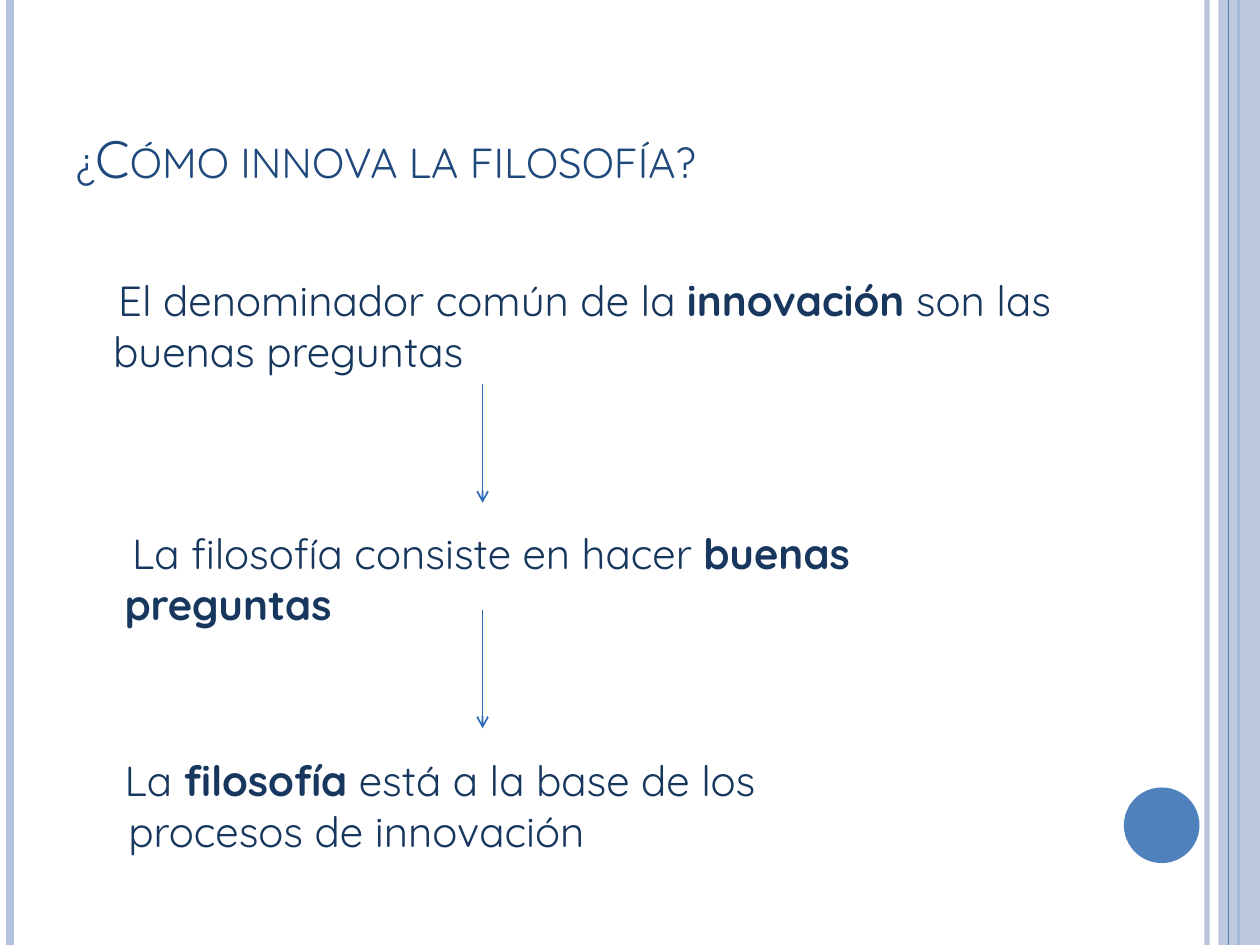
from dataclasses import dataclass

from lxml.etree import SubElement
from pptx import Presentation
from pptx.dml.color import RGBColor
from pptx.enum.shapes import MSO_CONNECTOR, MSO_SHAPE
from pptx.enum.text import MSO_ANCHOR, MSO_AUTO_SIZE, PP_ALIGN
from pptx.oxml.ns import qn
from pptx.util import Inches, Pt


@dataclass(frozen=True)
class Theme:
    font: str = "Quicksand"
    title: str = "1F497D"
    text: str = "17375E"
    pale: str = "B3C1DB"
    accent: str = "4F81BD"
    arrow: str = "2C6CB9"
    title_size: int = 30
    text_size: int = 24


class Deck:
    def __init__(self, prs, theme):
        self.theme = theme
        self.s = prs.slides.add_slide(prs.slide_layouts[5])

    def _font(self, r, size, color, bold=False):
        r.font.name = self.theme.font
        r.font.size = Pt(size)
        r.font.bold = bold
        r.font.color.rgb = RGBColor.from_string(color)

    def _alpha(self, fill, percent):
        clr = fill._xPr.find(qn("a:solidFill"))[0]
        SubElement(clr, qn("a:alpha"), val=str(percent * 1000))

    def title(self, text, x, y, w, h):
        sp = self.s.shapes.title
        sp.left, sp.top, sp.width, sp.height = map(Inches, (x, y, w, h))
        tf = sp.text_frame
        tf.text = text
        tf.word_wrap = True
        tf.auto_size = MSO_AUTO_SIZE.NONE
        tf.vertical_anchor = MSO_ANCHOR.BOTTOM
        p = tf.paragraphs[0]
        p.alignment = PP_ALIGN.LEFT
        r = p.runs[0]
        self._font(r, self.theme.title_size, self.theme.title)
        r.font._element.set("cap", "small")

    def text(self, parts, x, y, w, h, indent, inset=0.05):
        tf = self.s.shapes.add_textbox(*map(Inches, (x, y, w, h))).text_frame
        tf.word_wrap = True
        tf.margin_top = Inches(inset)
        p = tf.paragraphs[0]
        p.space_before = Pt(6)
        pPr = p._p.get_or_add_pPr()
        pPr.set("marL", str(Inches(0.3)))
        pPr.set("indent", str(Inches(indent)))
        for part, bold in parts:
            r = p.add_run()
            r.text = part
            self._font(r, self.theme.text_size, self.theme.text, bold)

    def shape(self, kind, x, y, w, h, color, alpha=100):
        sp = self.s.shapes.add_shape(kind, *map(Inches, (x, y, w, h)))
        sp.shadow.inherit = False
        sp.fill.solid()
        sp.fill.fore_color.rgb = RGBColor.from_string(color)
        sp.line.fill.background()
        if alpha < 100:
            self._alpha(sp.fill, alpha)

    def line(self, x, y1, y2, color, width, alpha=100, arrow=False):
        c = self.s.shapes.add_connector(
            MSO_CONNECTOR.STRAIGHT, *map(Inches, (x, y1, x, y2)))
        c.line.color.rgb = RGBColor.from_string(color)
        c.line.width = Pt(width)
        if alpha < 100:
            self._alpha(c.line.fill, alpha)
        if arrow:
            SubElement(c.line._get_or_add_ln(), qn("a:tailEnd"), type="arrow")
        SubElement(c._element.spPr, qn("a:effectLst"))


def main():
    prs = Presentation()
    prs.slide_width, prs.slide_height = Inches(10), Inches(7.5)
    theme = Theme()
    d = Deck(prs, theme)

    d.line(9.58, 0, 7.5, theme.pale, 3, alpha=93)
    d.line(0.08, 0, 7.5, theme.pale, 4.5)
    d.line(9.83, 0, 7.5, theme.accent, 1.5)
    d.shape(MSO_SHAPE.RECTANGLE, 9.67, 0, 0.33, 7.5, theme.pale, alpha=87)
    d.line(9.75, 0, 7.5, theme.accent, 0.75)
    d.shape(MSO_SHAPE.OVAL, 8.92, 6.25, 0.6, 0.6, theme.accent)

    d.title("¿Cómo innova la filosofía?", 0.5, 0.3, 8.17, 1.25)
    d.text([("El denominador común de la ", False), ("innovación", True),
            (" son las buenas preguntas", False)],
           0.5, 1.75, 8.17, 5.33, indent=0.04, inset=0.43)
    d.text([("La filosofía consiste en hacer ", False),
            ("buenas preguntas", True)],
           0.59, 4.14, 7.87, 0.91, indent=0.06)
    d.text([("La ", False), ("filosofía", True),
            (" está a la base de los procesos de innovación", False)],
           0.62, 5.94, 6.85, 0.91, indent=-0.03)
    for y in (3.05, 4.84):
        d.line(3.83, y, y + 0.94, theme.arrow, 1, arrow=True)

    prs.save("out.pptx")


if __name__ == "__main__":
    main()
